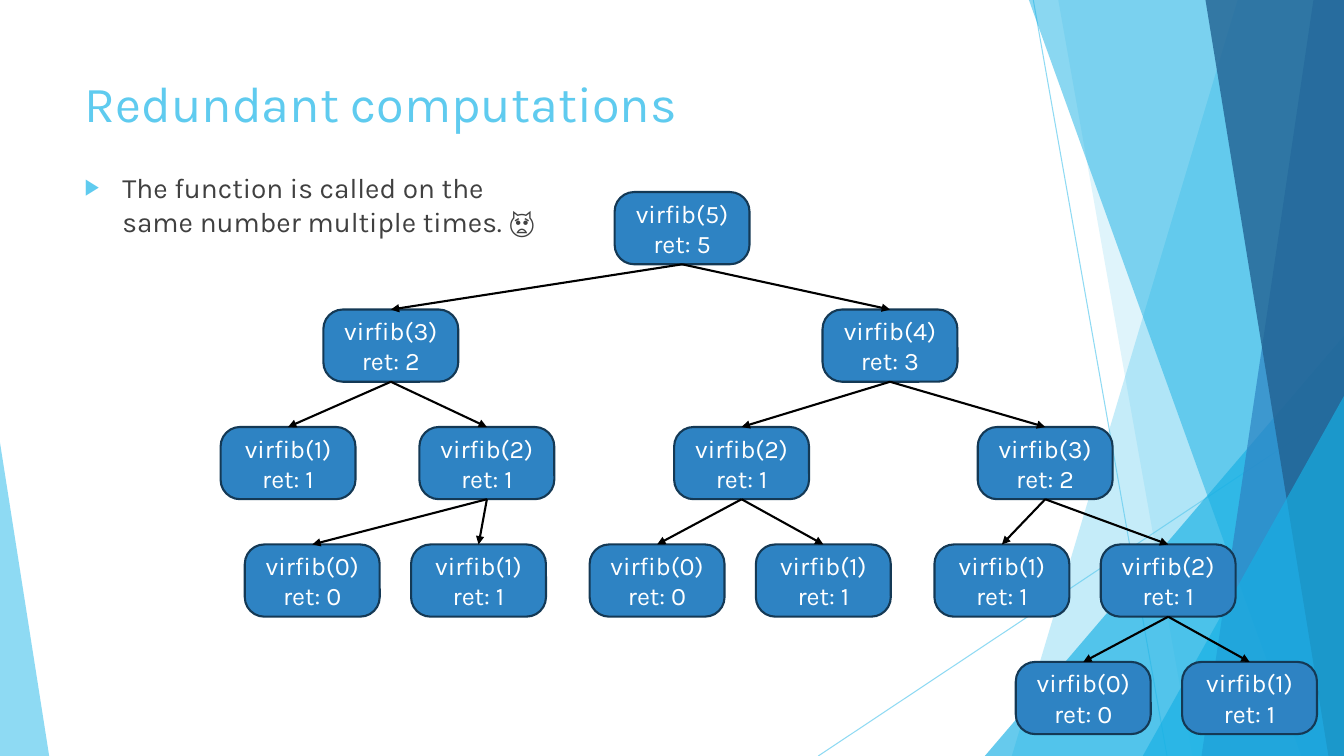
from lxml.etree import SubElement
from pptx import Presentation
from pptx.dml.color import RGBColor
from pptx.enum.shapes import MSO_CONNECTOR, MSO_SHAPE
from pptx.enum.text import MSO_ANCHOR, MSO_AUTO_SIZE, PP_ALIGN
from pptx.oxml.ns import qn
from pptx.util import Cm, Pt

TITLE = "Redundant computations"
BULLET = "The function is called on the same number multiple times. 🙀"

CALL_TREE = (5, 15.49, [
    (3, 8.15, [
        (1, 5.56, []),
        (2, 10.57, [(0, 6.17, []), (1, 10.36, [])]),
    ]),
    (4, 20.73, [
        (2, 16.99, [(0, 14.86, []), (1, 19.05, [])]),
        (3, 24.64, [
            (1, 23.55, []),
            (2, 27.74, [(0, 25.6, []), (1, 29.79, [])]),
        ]),
    ]),
])

THEME = {
    "font": "Karla",
    "sky": "5FCBEF", "cyan": "17B0E4", "blue": "2E83C3", "navy": "226292",
    "outline": "143955", "arrow": "000000", "body": "404040", "white": "FFFFFF",
    "title_size": 36, "body_size": 20, "call_size": 18,
    "hairline": 0.75, "stroke": 1.5,
}

WIDTH, HEIGHT = 33.87, 19.05
TITLE_BOX = (1.88, 1.7, 23.88, 3.66)
BODY_BOX = (1.88, 4.17, 12.19, 9.07)
CALL_WIDTH, CALL_HEIGHT = 3.4, 1.82
FIRST_ROW, ROW_PITCH = 4.84, 2.96

RAYS = [(26.04, 0, 29.41, HEIGHT), (WIDTH, 10.24, 20.62, HEIGHT)]
FACETS = [
    ("slab", (31.19, 25.5), "sky", 36),
    ("slab", (26.67, 30.05), "sky", 20),
    ("right", (24.82, 8.46, 9.05, 10.59), "cyan", 66),
    ("slab", (25.93, 32.79), "cyan", 50),
    ("slab", (33.1, 30.28), "blue", 70),
    ("slab", (30.38, 33.48), "navy", 80),
    ("right", (28.8, 9.98, 5.07, 9.07), "cyan", 66),
    ("left", (0, 11.15, 1.24, 7.9), "sky", 70),
]


def lengths(values):
    return [Cm(value) for value in values]


def assign(target, values):
    for name, value in values.items():
        setattr(target, name, value)


def colour(name):
    return RGBColor.from_string(THEME[name])


def set_opacity(shape, percent):
    for element in shape._element.spPr.iter(qn("a:srgbClr")):
        SubElement(element, qn("a:alpha"), val=str(percent * 1000))


def write(paragraph, text, size, colour_name, **layout):
    run = paragraph.add_run()
    run.text = text
    assign(run.font, {"name": THEME["font"], "size": Pt(THEME[size])})
    run.font.color.rgb = colour(colour_name)
    assign(paragraph, layout)


def add_line(slide, ends, colour_name, width):
    line = slide.shapes.add_connector(MSO_CONNECTOR.STRAIGHT, *lengths(ends))
    line.line.color.rgb = colour(colour_name)
    line.line.width = Pt(THEME[width])
    SubElement(line._element.spPr, qn("a:effectLst"))
    return line


def add_facet(slide, kind, geometry, colour_name, opacity):
    if kind == "slab":
        top, bottom = geometry
        builder = slide.shapes.build_freeform(Cm(top), 0)
        corners = [(WIDTH, 0), (WIDTH, HEIGHT), (bottom, HEIGHT)]
        builder.add_line_segments([lengths(corner) for corner in corners])
        facet = builder.convert_to_shape()
    else:
        facet = slide.shapes.add_shape(MSO_SHAPE.ISOSCELES_TRIANGLE, *lengths(geometry))
        facet.adjustments[0] = 1 if kind == "right" else 0
    facet.shadow.inherit = False
    facet.fill.solid()
    facet.fill.fore_color.rgb = colour(colour_name)
    facet.line.fill.background()
    set_opacity(facet, opacity)


def fill_placeholder(placeholder, box, text, size, colour_name, **layout):
    assign(placeholder, dict(zip(("left", "top", "width", "height"), lengths(box))))
    frame = placeholder.text_frame
    assign(frame, {"word_wrap": True, "auto_size": MSO_AUTO_SIZE.NONE,
                   "vertical_anchor": MSO_ANCHOR.TOP})
    paragraph = frame.paragraphs[0]
    write(paragraph, text, size, colour_name, alignment=PP_ALIGN.LEFT, **layout)
    return paragraph


def add_bullet(paragraph):
    properties = paragraph._p.get_or_add_pPr()
    assign_indent = {"marL": str(Cm(0.95)), "indent": str(-Cm(0.95))}
    properties.attrib.update(assign_indent)
    bullet_colour = SubElement(properties, qn("a:buClr"))
    SubElement(bullet_colour, qn("a:srgbClr"), val=THEME["sky"])
    SubElement(properties, qn("a:buSzPct"), val="80000")
    SubElement(properties, qn("a:buChar"), char="▶")


def add_call(slide, argument, result, left, row):
    box = (left, FIRST_ROW + row * ROW_PITCH, CALL_WIDTH, CALL_HEIGHT)
    call = slide.shapes.add_shape(MSO_SHAPE.ROUNDED_RECTANGLE, *lengths(box))
    call.adjustments[0] = 0.27
    call.shadow.inherit = False
    call.fill.solid()
    call.fill.fore_color.rgb = colour("blue")
    call.line.color.rgb = colour("outline")
    call.line.width = Pt(THEME["stroke"])
    frame = call.text_frame
    assign(frame, {"word_wrap": False, "vertical_anchor": MSO_ANCHOR.MIDDLE})
    for paragraph, text in (
        (frame.paragraphs[0], f"virfib({argument})"),
        (frame.add_paragraph(), f"ret: {result}"),
    ):
        write(paragraph, text, "call_size", "white", alignment=PP_ALIGN.CENTER)
    return call


def add_arrow(slide, caller, callee):
    arrow = add_line(slide, (0, 0, 0, 0), "arrow", "stroke")
    arrow.begin_connect(caller, 2)
    arrow.end_connect(callee, 0)
    SubElement(arrow.line._get_or_add_ln(), qn("a:tailEnd"), type="triangle")


def add_tree(slide, node, row=0):
    argument, left, children = node
    branches = [add_tree(slide, child, row + 1) for child in children]
    result = sum(value for _, value in branches) if branches else argument
    call = add_call(slide, argument, result, left, row)
    for callee, _ in branches:
        add_arrow(slide, call, callee)
    return call, result


def main():
    """Build the slide on redundant recursive calls."""
    presentation = Presentation()
    assign(presentation, {"slide_width": Cm(WIDTH), "slide_height": Cm(HEIGHT)})
    slide = presentation.slides.add_slide(presentation.slide_layouts[1])
    for ends in RAYS:
        set_opacity(add_line(slide, ends, "sky", "hairline"), 70)
    for facet in FACETS:
        add_facet(slide, *facet)
    fill_placeholder(slide.shapes.title, TITLE_BOX, TITLE, "title_size", "sky")
    body = fill_placeholder(slide.placeholders[1], BODY_BOX, BULLET,
                            "body_size", "body", space_before=Pt(10))
    add_bullet(body)
    add_tree(slide, CALL_TREE)
    presentation.save("out.pptx")


if __name__ == "__main__":
    main()
